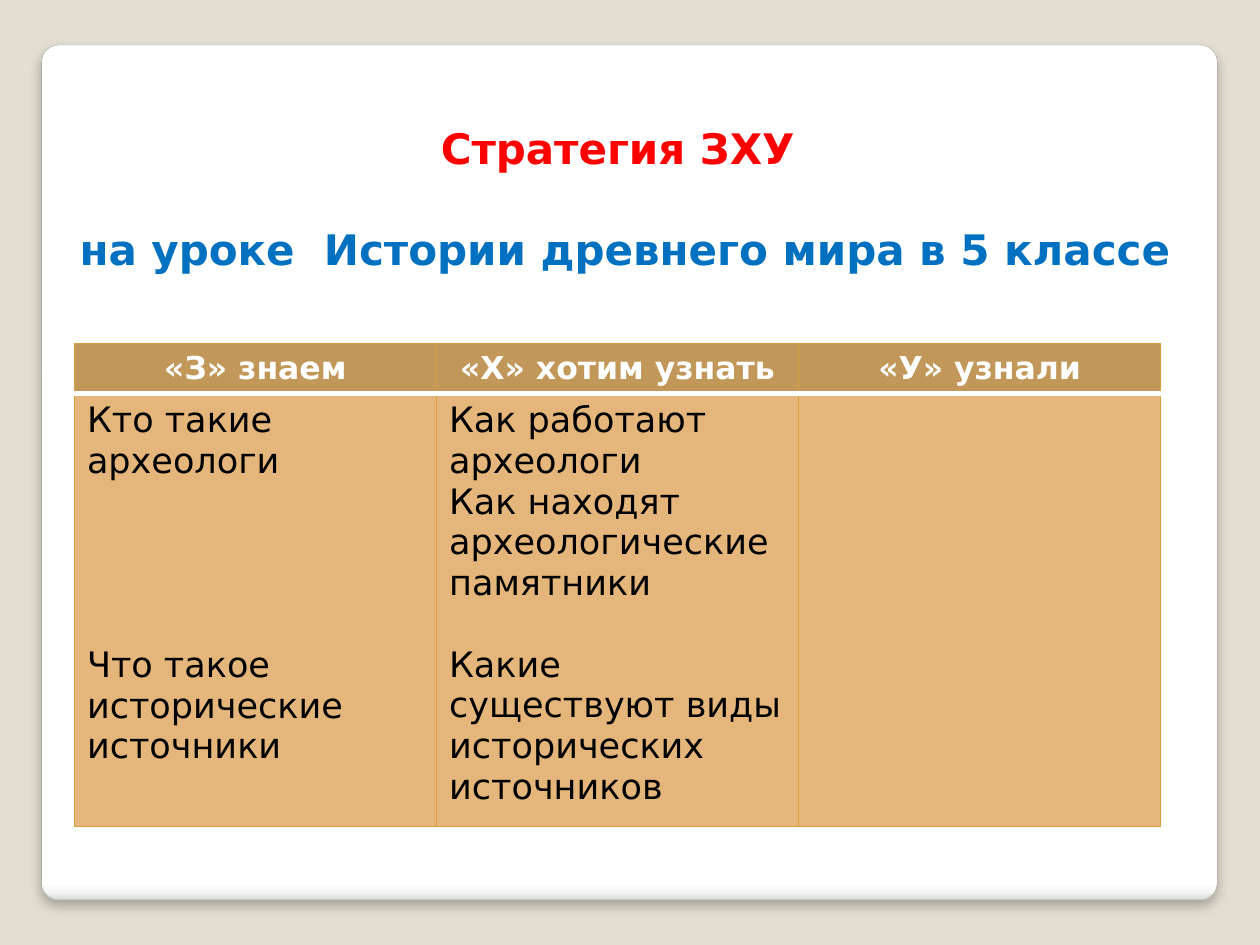
from lxml import etree
from pptx import Presentation
from pptx.dml.color import RGBColor
from pptx.enum import shapes, text
from pptx.oxml import parse_xml
from pptx.oxml.ns import nsdecls, qn
from pptx.util import Cm, Pt

FONT = "DejaVu Sans"
BEIGE = RGBColor(0xE3, 0xDE, 0xD1)
WHITE = RGBColor(0xFF, 0xFF, 0xFF)
BLACK = RGBColor(0x00, 0x00, 0x00)
RED = RGBColor(0xFF, 0x00, 0x00)
BLUE = RGBColor(0x00, 0x70, 0xC0)
EDGE = RGBColor(0xA4, 0xA4, 0xA4)
NEAR_WHITE = RGBColor(0xF7, 0xF7, 0xF7)
SILVER = RGBColor(0xDA, 0xDA, 0xDA)
BROWN = RGBColor(0xC1, 0x98, 0x59)
SAND = RGBColor(0xE4, 0xB6, 0x7B)
GOLD = RGBColor(0xDB, 0x9E, 0x3F)

CARD_STOPS = [(0, WHITE), (98, WHITE), (99, NEAR_WHITE), (100, SILVER)]
HEADERS = ["«З» знаем", "«Х» хотим узнать", "«У» узнали"]
BODY = [
    [("Кто такие археологи", 0), ("Что такое исторические источники", 93.2)],
    [("Как работают археологи", 0),
     ("Как находят археологические памятники", 0),
     ("Какие существуют виды исторических источников", 23.3)],
    [],
]


def write(paragraph, content, size=20, color=BLACK, bold=False,
          align=text.PP_ALIGN.LEFT, before=0):
    paragraph.alignment = align
    paragraph.space_before = Pt(before)
    run = paragraph.add_run()
    run.text = content
    run.font.name = FONT
    run.font.size = Pt(size)
    run.font.bold = bold
    run.font.color.rgb = color


def paragraph_at(frame, index):
    return frame.paragraphs[0] if index == 0 else frame.add_paragraph()


def add_card(slide):
    card = slide.shapes.add_shape(shapes.MSO_SHAPE.ROUNDED_RECTANGLE,
                                  Cm(0.84), Cm(0.91), Cm(23.7), Cm(17.23))
    card.adjustments[0] = 0.02
    card.line.color.rgb = EDGE
    card.line.width = Pt(0.16)
    card.fill.gradient()
    card.fill.gradient_angle = 270
    properties = card.element.spPr
    stops = properties.find(".//" + qn("a:gsLst"))
    for stop in list(stops):
        stops.remove(stop)
    for position, color in CARD_STOPS:
        stop = etree.SubElement(stops, qn("a:gs"), pos=str(position * 1000))
        etree.SubElement(stop, qn("a:srgbClr"), val=str(color))
    properties.append(parse_xml(
        f'<a:effectLst {nsdecls("a")}><a:outerShdw blurRad="{Pt(6)}" '
        f'dist="{Pt(4)}" dir="5400000" algn="t" rotWithShape="0">'
        '<a:srgbClr val="000000"><a:alpha val="25000"/></a:srgbClr>'
        '</a:outerShdw></a:effectLst>'))


def set_borders(cell, **sides):
    properties = cell._tc.get_or_add_tcPr()
    for index, side in enumerate("LRTB"):
        color, width = sides.get(side, (GOLD, 0.75))
        properties.insert(index, parse_xml(
            f'<a:ln{side} {nsdecls("a")} w="{Pt(width)}"><a:solidFill>'
            f'<a:srgbClr val="{color}"/></a:solidFill></a:ln{side}>'))


def fill_cell(cell, color):
    cell.fill.solid()
    cell.fill.fore_color.rgb = color


def add_strategy_table(slide):
    table = slide.shapes.add_table(2, len(HEADERS), Cm(1.5), Cm(6.93),
                                   Cm(21.9), Cm(9.73)).table
    table.rows[0].height = Cm(1.01)
    table.rows[1].height = Cm(8.72)
    separator = (WHITE, 3.35)
    for column, (header, questions) in enumerate(zip(HEADERS, BODY)):
        table.columns[column].width = Cm(7.3)
        top, bottom = table.cell(0, column), table.cell(1, column)
        fill_cell(top, BROWN)
        fill_cell(bottom, SAND)
        set_borders(top, B=separator)
        set_borders(bottom, T=separator)
        write(top.text_frame.paragraphs[0], header, size=18, color=WHITE,
              bold=True, align=text.PP_ALIGN.CENTER)
        for index, (question, before) in enumerate(questions):
            write(paragraph_at(bottom.text_frame, index), question,
                  before=before)


def place_title(slide):
    title = slide.shapes.title
    title.left, title.top = Cm(1.3), Cm(2.34)
    title.width, title.height = Cm(22.6), Cm(3.33)
    frame = title.text_frame
    frame.word_wrap = True
    frame.auto_size = text.MSO_AUTO_SIZE.NONE
    frame.vertical_anchor = text.MSO_ANCHOR.TOP
    lines = [("Стратегия ЗХУ ", RED, 0),
             ("на уроке  Истории древнего мира в 5 классе", BLUE, 29)]
    for index, (line, color, before) in enumerate(lines):
        write(paragraph_at(frame, index), line, size=24, color=color,
              bold=True, align=text.PP_ALIGN.CENTER, before=before)
    slide.shapes.element.append(title.element)


def main():
    presentation = Presentation()
    presentation.slide_width = Cm(25.4)
    presentation.slide_height = Cm(19.05)
    slide = presentation.slides.add_slide(presentation.slide_layouts[5])
    slide.background.fill.solid()
    slide.background.fill.fore_color.rgb = BEIGE
    add_card(slide)
    add_strategy_table(slide)
    place_title(slide)
    presentation.save("out.pptx")


if __name__ == "__main__":
    main()
